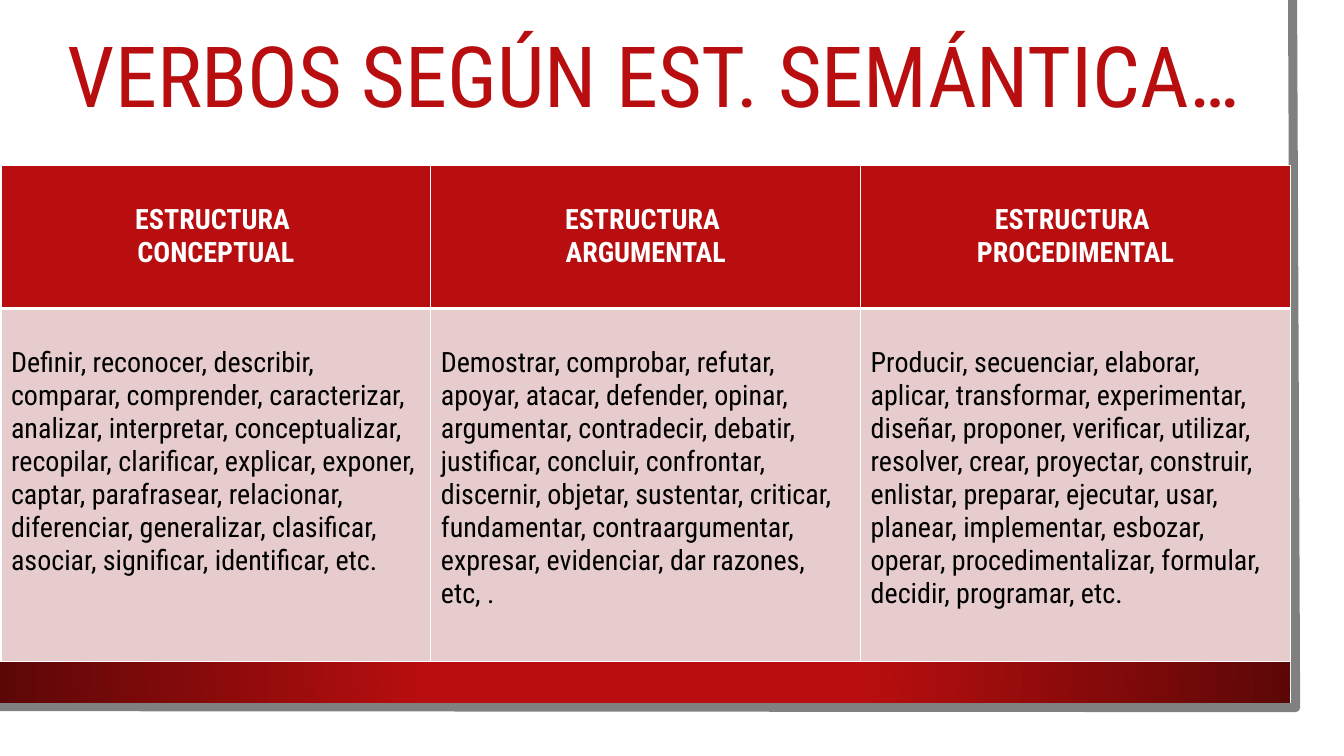
from dataclasses import dataclass

from lxml.etree import SubElement
from pptx import Presentation
from pptx.dml.color import RGBColor
from pptx.enum.shapes import MSO_SHAPE as Preset
from pptx.enum.text import MSO_ANCHOR as Anchor, MSO_AUTO_SIZE as AutoSize, PP_ALIGN as Align
from pptx.oxml import parse_xml
from pptx.oxml.ns import nsdecls, qn
from pptx.util import Inches, Pt

FONT = "Roboto Condensed"
RED = RGBColor(0xB8, 0x0E, 0x0F)
DARK_RED = RGBColor(0x5C, 0x07, 0x07)
PINK = RGBColor(0xE6, 0xCC, 0xCC)
GREY = RGBColor(0x80, 0x80, 0x80)
WHITE = RGBColor(0xFF, 0xFF, 0xFF)
BLACK = RGBColor(0x00, 0x00, 0x00)


@dataclass(frozen=True)
class VerbGroup:
    heading: str
    verbs: str


@dataclass(frozen=True)
class CellStyle:
    fill: RGBColor
    color: RGBColor
    bold: bool
    align: Align
    bottom_border: float


HEADER = CellStyle(RED, WHITE, True, Align.CENTER, 3)
BODY = CellStyle(PINK, BLACK, False, Align.LEFT, 1)

GROUPS = [
    VerbGroup(
        "ESTRUCTURA \nCONCEPTUAL",
        "Definir, reconocer, describir, comparar, comprender, caracterizar, analizar, "
        "interpretar, conceptualizar, recopilar, clarificar, explicar, exponer, captar, "
        "parafrasear, relacionar, diferenciar, generalizar, clasificar, asociar, "
        "significar, identificar, etc.",
    ),
    VerbGroup(
        "ESTRUCTURA \nARGUMENTAL",
        "Demostrar, comprobar, refutar, apoyar, atacar, defender, opinar, argumentar, "
        "contradecir, debatir, justificar, concluir, confrontar, discernir, objetar, "
        "sustentar, criticar, fundamentar, contraargumentar, expresar, evidenciar, "
        "dar razones, etc, .",
    ),
    VerbGroup(
        "ESTRUCTURA \nPROCEDIMENTAL",
        "Producir, secuenciar, elaborar, aplicar, transformar, experimentar, diseñar, "
        "proponer, verificar, utilizar, resolver, crear, proyectar, construir, enlistar, "
        "preparar, ejecutar, usar, planear, implementar, esbozar, operar, "
        "procedimentalizar, formular, decidir, programar, etc.",
    ),
]


def format_text(frame, size: float, color: RGBColor, bold: bool, align: Align) -> None:
    for para in frame.paragraphs:
        para.alignment = align
        for span in para.runs:
            span.font.name = FONT
            span.font.size = Pt(size)
            span.font.bold = bold
            span.font.color.rgb = color


def add_panel(page, left: float, top: float, width: float, height: float):
    panel = page.shapes.add_shape(
        Preset.RECTANGLE, Inches(left), Inches(top), Inches(width), Inches(height))
    panel.shadow.inherit = False
    panel.line.fill.background()
    panel.fill.solid()
    panel.fill.fore_color.rgb = WHITE
    return panel


def set_radial_fill(panel) -> None:
    gradient = parse_xml(
        f'<a:gradFill {nsdecls("a")} rotWithShape="1"><a:gsLst>'
        f'<a:gs pos="34000"><a:srgbClr val="{RED}"/></a:gs>'
        f'<a:gs pos="100000"><a:srgbClr val="{DARK_RED}"/></a:gs></a:gsLst>'
        '<a:path path="circle"><a:fillToRect l="50000" t="50000" r="50000" b="50000"/>'
        '</a:path></a:gradFill>')
    solid = panel.element.spPr.find(qn("a:solidFill"))
    solid.getparent().replace(solid, gradient)


def add_frame_line(page) -> None:
    builder = page.shapes.build_freeform(Inches(12.82), Inches(0))
    builder.add_line_segments(
        [(Inches(12.85), Inches(7.02)), (Inches(-0.03), Inches(7.01))], close=False)
    outline = builder.convert_to_shape()
    outline.shadow.inherit = False
    outline.fill.background()
    outline.line.color.rgb = GREY
    outline.line.width = Pt(6.5)


def set_borders(cell, bottom: float) -> None:
    properties = cell._tc.get_or_add_tcPr()
    widths = {"lnL": 1, "lnR": 1, "lnT": 1, "lnB": bottom}
    for index, (side, width) in enumerate(widths.items()):
        border = SubElement(properties, qn(f"a:{side}"), w=str(Pt(width)))
        solid = SubElement(border, qn("a:solidFill"))
        SubElement(solid, qn("a:srgbClr"), val=str(WHITE))
        properties.insert(index, border)


def fill_cell(cell, text: str, style: CellStyle) -> None:
    cell.text_frame.text = text
    cell.margin_top = Inches(0.38)
    cell.fill.solid()
    cell.fill.fore_color.rgb = style.fill
    format_text(cell.text_frame, 20, style.color, style.bold, style.align)
    set_borders(cell, style.bottom_border)


def add_verb_table(page) -> None:
    table = page.shapes.add_table(
        2, len(GROUPS), Inches(0.01), Inches(1.64), Inches(12.79), Inches(4.92)).table
    table.horz_banding = False
    table.rows[0].height = Inches(1.42)
    table.rows[1].height = Inches(3.5)
    for column, group in enumerate(GROUPS):
        fill_cell(table.cell(0, column), group.heading, HEADER)
        fill_cell(table.cell(1, column), group.verbs, BODY)


def format_title(title) -> None:
    title.left, title.top = Inches(0.16), Inches(0.51)
    title.width, title.height = Inches(12.65), Inches(1.41)
    frame = title.text_frame
    frame.text = "VERBOS SEGÚN EST. SEMÁNTICA…"
    frame.auto_size = AutoSize.NONE
    frame.word_wrap = True
    frame.vertical_anchor = Anchor.MIDDLE
    frame.margin_bottom = Inches(0.88)
    frame.paragraphs[0].line_spacing = 0.9
    format_text(frame, 60.3, RED, False, Align.CENTER)


def main() -> None:
    deck = Presentation()
    deck.slide_width, deck.slide_height = Inches(13.33), Inches(7.5)
    page = deck.slides.add_slide(deck.slide_layouts[5])

    # Backdrop
    add_panel(page, 0, 0, 13.1, 7.27)
    add_frame_line(page)
    set_radial_fill(add_panel(page, 0, 6.12, 12.8, 0.85))

    # Title, brought in front of the backdrop
    title = page.shapes.title
    format_title(title)
    title.element.getparent().append(title.element)

    # Verbs by structure
    add_verb_table(page)

    deck.save("out.pptx")


if __name__ == "__main__":
    main()
